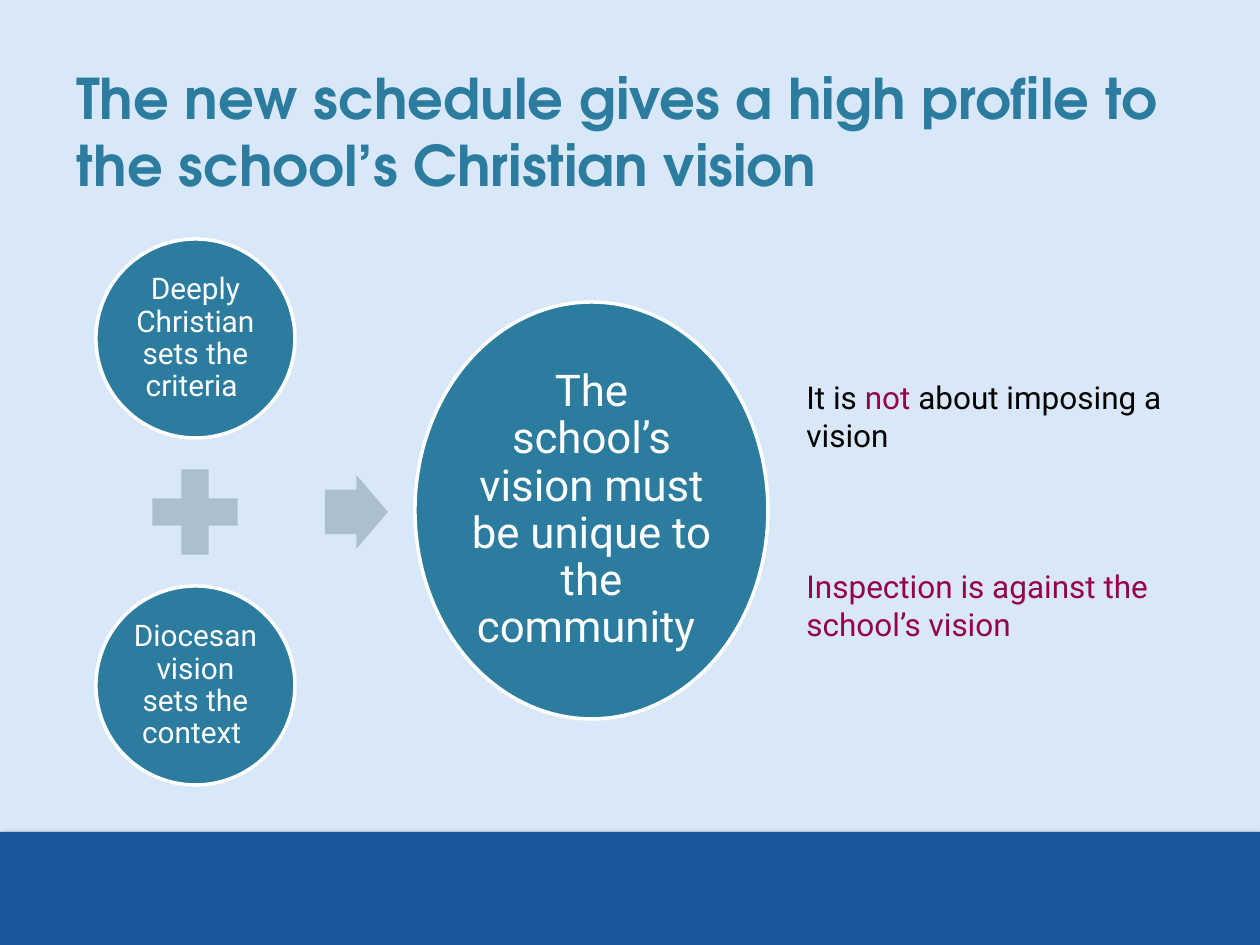
"""Build the slide on the school's Christian vision."""
from pptx import Presentation
from pptx.dml.color import RGBColor
from pptx.enum.shapes import MSO_SHAPE
from pptx.enum.text import MSO_ANCHOR, PP_ALIGN
from pptx.oxml import parse_xml
from pptx.oxml.ns import nsdecls
from pptx.util import Pt

PX = 914400 // 126
RECT, OVAL = MSO_SHAPE.RECTANGLE, MSO_SHAPE.OVAL
PLUS, ARROW = MSO_SHAPE.MATH_PLUS, MSO_SHAPE.RIGHT_ARROW
BOTTOM, MIDDLE, CENTER = MSO_ANCHOR.BOTTOM, MSO_ANCHOR.MIDDLE, PP_ALIGN.CENTER
HEX = {"sky": "D9E8F9", "navy": "18579B", "teal": "2C7C9F", "grey": "ADBFCD",
       "white": "FFFFFF", "black": "000000", "plum": "96004B"}
COLOR = {name: RGBColor.from_string(code) for name, code in HEX.items()}


def add_run(para, text, color, **form):
    run = para.add_run()
    run.text = text
    run.font.color.rgb = COLOR[color]
    for key, value in form.items():
        setattr(run.font, key, value)


def add_form(kind, box, color):
    form = slide.shapes.add_shape(kind, *[n * PX for n in box])
    form.shadow.inherit = False
    form.fill.solid()
    form.fill.fore_color.rgb = COLOR[color]
    form.line.fill.background()
    return form


deck = Presentation()
deck.slide_width, deck.slide_height = 1260 * PX, 945 * PX
slide = deck.slides.add_slide(deck.slide_layouts[6])
slide.background.fill.solid()
slide.background.fill.fore_color.rgb = COLOR["sky"]

band = add_form(RECT, (0, 832, 1260, 113), "navy")
props = band.element.spPr
props.remove(props.find("{*}effectLst"))
props.append(parse_xml(
    f'<a:effectLst {nsdecls("a")}><a:outerShdw blurRad="{Pt(5)}" dist="{Pt(2)}" '
    'dir="5400000" rotWithShape="0"><a:srgbClr val="000000">'
    '<a:alpha val="40000"/></a:srgbClr></a:outerShdw></a:effectLst>'))

title = slide.shapes.add_textbox(64 * PX, 58 * PX, 1134 * PX, 146 * PX).text_frame
title.word_wrap, title.vertical_anchor = True, BOTTOM
add_run(title.paragraphs[0],
        "The new schedule gives a high profile to the school’s Christian vision",
        "teal", name="TeX Gyre Adventor", size=Pt(32), bold=True)

side, plus, gap, left, top = 199, 116, 16, 96, 239
low = top + side + plus + 2 * gap
ovals = [
    ((left, top, side, side), "Deeply Christian sets the criteria ", 17, 3),
    ((left, low, side, side), "Diocesan vision sets the context ", 17, 3),
    ((415, 302, 353, 417),
     "The school’s vision must be unique to the community ", 25, 4),
]
for box, text, size, inset in ovals:
    oval = add_form(OVAL, box, "teal")
    oval.line.color.rgb, oval.line.width = COLOR["white"], Pt(2)
    frame = oval.text_frame
    frame.word_wrap, frame.vertical_anchor = True, MIDDLE
    for edge in ("left", "top", "right", "bottom"):
        setattr(frame, f"margin_{edge}", inset * PX)
    para = frame.paragraphs[0]
    para.alignment, para.line_spacing = CENTER, 0.9
    add_run(para, text, "white", name="Roboto", size=Pt(size))

add_form(PLUS, (left + (side - plus) // 2, top + side + gap, plus, plus), "grey")
arrow = add_form(ARROW, (325, 475, 63, 74), "grey")
arrow.adjustments[0] = 0.6

notes = [
    [("It is ", "black"), ("not", "plum"), (" about imposing a vision", "black")],
    [("Inspection is against the school’s vision", "plum")],
]
frame = slide.shapes.add_textbox(794 * PX, 372 * PX, 451 * PX, 280 * PX).text_frame
frame.word_wrap = True
for row, runs in enumerate(notes):
    para = frame.add_paragraph() if row else frame.paragraphs[0]
    if row:
        para.space_before = Pt(65)
    for text, color in runs:
        add_run(para, text, color, name="Roboto", size=Pt(18))

deck.save("out.pptx")
